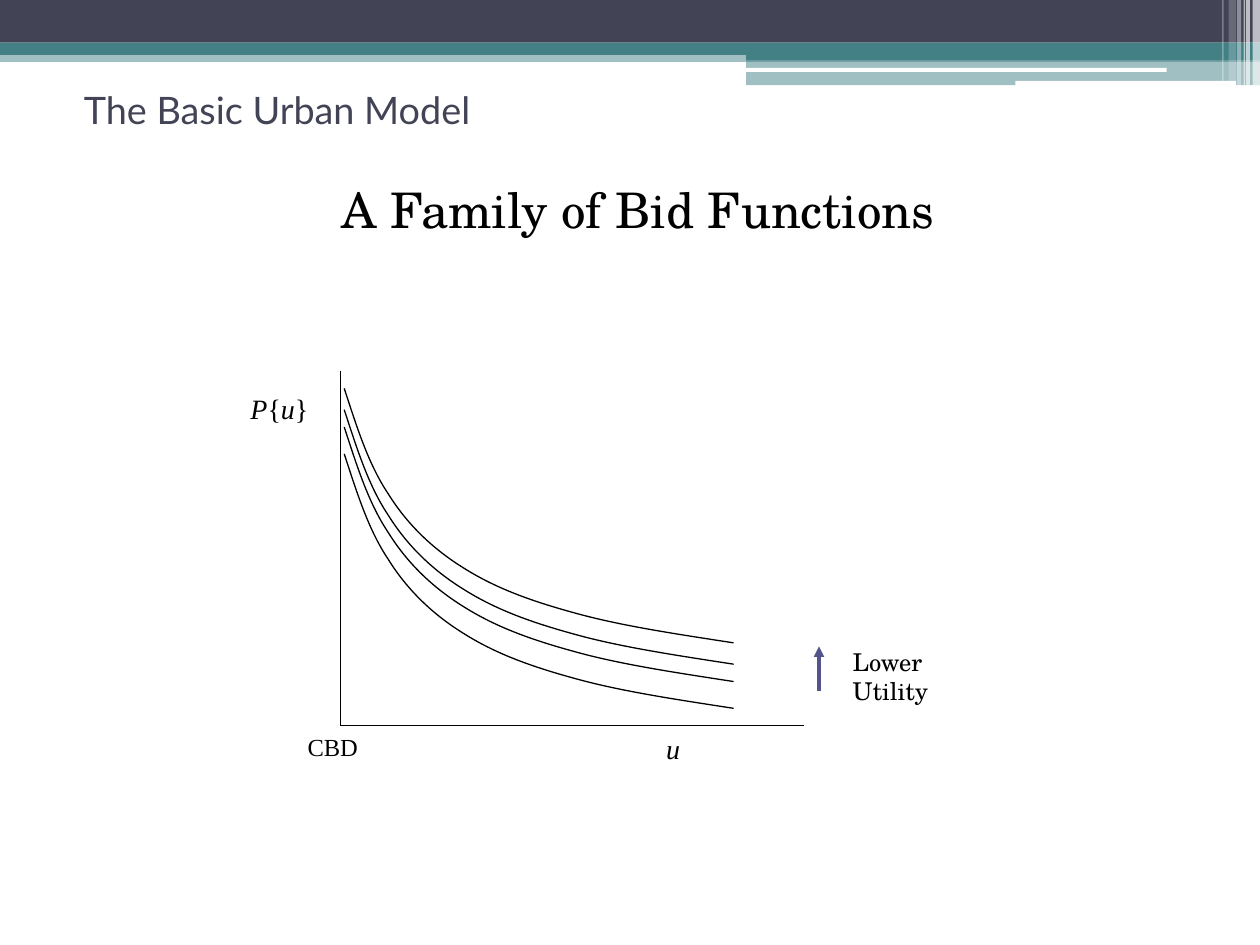
from lxml import etree
from pptx import Presentation
from pptx.dml.color import RGBColor
from pptx.enum.shapes import MSO_CONNECTOR, MSO_SHAPE
from pptx.enum.text import MSO_ANCHOR, MSO_AUTO_SIZE, PP_ALIGN
from pptx.oxml.ns import qn
from pptx.util import Cm, Pt

STRAIGHT = MSO_CONNECTOR.STRAIGHT
RECTANGLE, ROUNDED = MSO_SHAPE.RECTANGLE, MSO_SHAPE.ROUNDED_RECTANGLE
TOP, MIDDLE = MSO_ANCHOR.TOP, MSO_ANCHOR.MIDDLE
NO_AUTOFIT = MSO_AUTO_SIZE.NONE
LEFT, CENTER = PP_ALIGN.LEFT, PP_ALIGN.CENTER

SLATE = RGBColor(0x42, 0x44, 0x56)
TEAL = RGBColor(0x43, 0x80, 0x86)
VIOLET = RGBColor(0x53, 0x54, 0x8A)
WHITE = RGBColor(0xFF, 0xFF, 0xFF)
BLACK = RGBColor(0, 0, 0)

SANS, SCHOOLBOOK, SERIF = "Lato", "TeX Gyre Schola", "Times New Roman"

# Header bands: left, top, width, height (cm), colour, opacity in percent
BANDS = [
    (0, 1.02, 25.4, 0.23, TEAL, 50),
    (0, 0, 25.4, 0.86, SLATE, 100),
    (0, 0.86, 25.4, 0.25, TEAL, 100),
    (15.04, 0.99, 10.36, 0.23, TEAL, 100),
    (15.04, 1.22, 10.36, 0.5, TEAL, 50),
]
HIGHLIGHTS = [(15.01, 1.37, 8.51, 0.08), (20.47, 1.63, 4.45, 0.1)]
# Stripes at the right edge: left, width, height (cm), opacity in percent
STRIPES = [
    (25.25, 0.15, 1.73, 65), (25.12, 0.08, 1.73, 65), (25.07, 0.03, 1.73, 60),
    (24.94, 0.08, 1.73, 40), (24.77, 0.15, 1.63, 20), (24.64, 0.03, 1.63, 30),
]

# One bid curve from its start: three Bezier points for each segment (cm)
CURVE = [
    (0.25, 0.76), (0.48, 1.52), (0.89, 2.13),
    (1.27, 2.74), (1.78, 3.23), (2.39, 3.61),
    (3.02, 4.01), (3.71, 4.27), (4.62, 4.52),
    (5.54, 4.78), (6.68, 4.95), (7.85, 5.13),
]
CURVE_LEFT = 0.08
CURVE_TOPS = [0.79, 1.14, 0.36, 1.68]


def add_block(page, kind, box, color, opacity=100):
    block = page.shapes.add_shape(kind, *(Cm(value) for value in box))
    block.shadow.inherit = False
    block.fill.solid()
    block.fill.fore_color.rgb = color
    block.line.fill.background()
    if opacity < 100:
        tint = block.fill._xPr.find(".//" + qn("a:srgbClr"))
        etree.SubElement(tint, qn("a:alpha"), val=str(opacity * 1000))


def add_line(page, start, end, color, width, arrow=False):
    line = page.shapes.add_connector(STRAIGHT, *(Cm(v) for v in start + end))
    line.line.color.rgb = color
    line.line.width = Pt(width)
    if arrow:
        etree.SubElement(line.line._get_or_add_ln(), qn("a:tailEnd"), type="triangle")
    etree.SubElement(line._element.spPr, qn("a:effectLst"))


def add_run(para, text, font, size, color=BLACK, italic=False):
    span = para.add_run()
    span.text = text
    span.font.name = font
    span.font.size = Pt(size)
    span.font.color.rgb = color
    span.font.italic = italic


def place(shape, box):
    shape.left, shape.top, shape.width, shape.height = (Cm(v) for v in box)


def add_label(page, box, lines, font, size):
    """Each line is a list of (text, italic) runs."""
    frame = page.shapes.add_textbox(*(Cm(v) for v in box)).text_frame
    frame.word_wrap = True
    for number, runs in enumerate(lines):
        para = frame.add_paragraph() if number else frame.paragraphs[0]
        for text, italic in runs:
            add_run(para, text, font, size, italic=italic)


def add_curve(page, left, top):
    points = [(Cm(left + x), Cm(top + y)) for x, y in CURVE]
    builder = page.shapes.build_freeform(Cm(left), Cm(top))
    builder.add_line_segments(points, close=False)
    curve = builder.convert_to_shape()
    curve.shadow.inherit = False
    curve.fill.background()
    curve.line.color.rgb = BLACK
    curve.line.width = Pt(0.75)
    # Turn every three straight steps into one Bezier segment
    outline = curve._element.find(".//" + qn("a:path"))
    steps = outline.findall(qn("a:lnTo"))
    for first in range(0, len(steps), 3):
        bend = etree.SubElement(outline, qn("a:cubicBezTo"))
        for step in steps[first:first + 3]:
            bend.append(step[0])
            outline.remove(step)


def add_header(page):
    for *box, color, opacity in BANDS:
        add_block(page, RECTANGLE, box, color, opacity)
    for box in HIGHLIGHTS:
        add_block(page, ROUNDED, box, WHITE)
    for left, width, height, opacity in STRIPES:
        add_block(page, RECTANGLE, (left, 0, width, height), WHITE, opacity)


def add_title(page, box):
    title = page.shapes.title
    place(title, box)
    frame = title.text_frame
    frame.auto_size = NO_AUTOFIT
    frame.vertical_anchor = MIDDLE
    frame.margin_left = Cm(0.42)
    frame.margin_top, frame.margin_bottom = Cm(0), Cm(0.86)
    para = frame.paragraphs[0]
    para.alignment = LEFT
    add_run(para, "The Basic Urban Model", SANS, 21.6, SLATE)


def add_heading(page, box):
    body = page.placeholders[1]
    place(body, box)
    frame = body.text_frame
    frame.auto_size = NO_AUTOFIT
    frame.vertical_anchor = TOP
    frame.margin_top = Cm(0.23)
    para = frame.paragraphs[0]
    layout = para._p.get_or_add_pPr()
    layout.set("marL", str(Cm(1.02)))
    layout.set("indent", str(Cm(-0.71)))
    etree.SubElement(layout, qn("a:buNone"))
    para.alignment = CENTER
    para.space_before = Pt(0)
    add_run(para, "A Family of Bid Functions", SCHOOLBOOK, 28)


def add_bid_diagram(page, left, top, width, height):
    bottom = top + height
    # Axes
    add_line(page, (left, top), (left, bottom), BLACK, 0.75)
    add_line(page, (left, bottom), (left + width, bottom), BLACK, 0.75)
    # Family of curves
    for offset in CURVE_TOPS:
        add_curve(page, left + CURVE_LEFT, top + offset)
    # Axis labels
    price = [("P", True), ("{", False), ("u", True), ("}", False)]
    add_label(page, (left - 2.06, top + 0.3, 2.24, 1.5), [price], SERIF, 16)
    add_label(page, (left + 6.32, bottom, 1.5, 1.22), [[("u", True)]], SERIF, 16)
    add_label(page, (left - 0.91, bottom, 2.26, 1.22), [[("CBD", False)]], SERIF, 14)
    # Direction of lower utility
    add_label(page, (left + 10.08, top + 5.44, 2.34, 1.45),
              [[("Lower", False)], [("Utility", False)]], SCHOOLBOOK, 14)
    arrow_x = left + 9.65
    add_line(page, (arrow_x, top + 6.45), (arrow_x, top + 5.56), VIOLET, 2, arrow=True)


def main():
    deck = Presentation()
    deck.slide_width, deck.slide_height = Cm(25.4), Cm(19.05)
    page = deck.slides.add_slide(deck.slide_layouts[1])
    add_header(page)
    add_title(page, (1.27, 1.9, 22.86, 1.47))
    add_heading(page, (1.27, 3.38, 22.86, 14.88))
    add_bid_diagram(page, 6.86, 7.47, 9.35, 7.16)
    deck.save("out.pptx")


if __name__ == "__main__":
    main()
